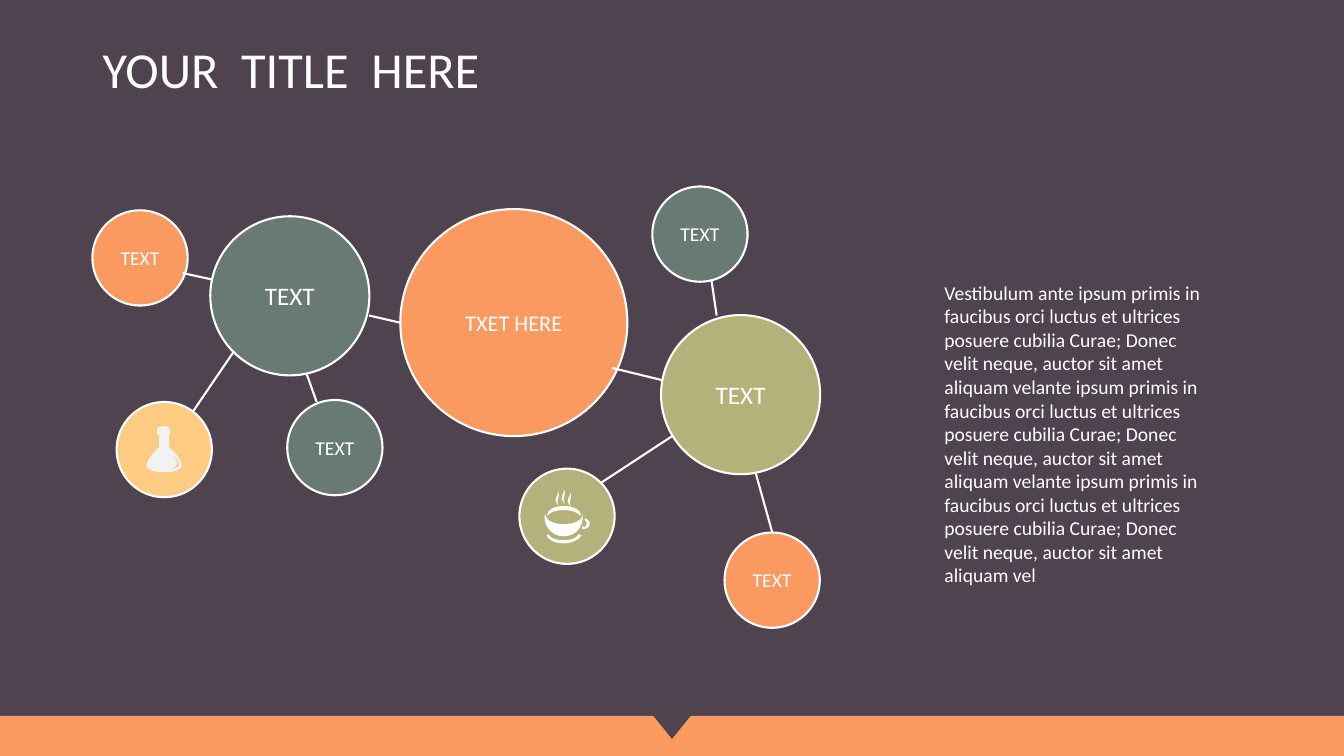
from lxml.etree import SubElement
from pptx import Presentation
from pptx.dml.color import RGBColor
from pptx.enum.shapes import MSO_CONNECTOR, MSO_SHAPE
from pptx.enum.text import MSO_ANCHOR, MSO_AUTO_SIZE, PP_ALIGN
from pptx.oxml.ns import qn
from pptx.util import Cm, Pt

PLUM = RGBColor(0x4F, 0x43, 0x4F)
ORANGE = RGBColor(0xFA, 0x9A, 0x60)
OLIVE = RGBColor(0xB4, 0xB1, 0x7A)
TEAL = RGBColor(0x69, 0x7A, 0x74)
YELLOW = RGBColor(0xFD, 0xCB, 0x82)
WHITE = RGBColor(0xFF, 0xFF, 0xFF)
PALE = RGBColor(0xF2, 0xF2, 0xF2)

FONT = "Calibri"
OUTLINE = Pt(1.5)
SLIDE_WIDTH, SLIDE_HEIGHT = 33.87, 19.05
BAR_TOP = 18.04
LARGE, MEDIUM, SMALL = 5.72, 4.01, 2.4
ICON_UNIT = Cm(2.54) / 100

BODY = (
    "Vestibulum ante ipsum primis in faucibus orci luctus et ultrices posuere cubilia Curae; "
    "Donec velit neque, auctor sit amet aliquam velante ipsum primis in faucibus orci luctus "
    "et ultrices posuere cubilia Curae; Donec velit neque, auctor sit amet aliquam velante "
    "ipsum primis in faucibus orci luctus et ultrices posuere cubilia Curae; Donec velit "
    "neque, auctor sit amet aliquam vel"
)

CIRCLES = [
    (10.09, 5.27, LARGE, ORANGE, "TXET HERE", 16),
    (16.66, 7.94, MEDIUM, OLIVE, "TEXT", 18),
    (5.3, 5.45, MEDIUM, TEAL, "TEXT", 18),
    (13.09, 11.81, SMALL, OLIVE, "", 14),
    (18.26, 13.42, SMALL, ORANGE, "TEXT", 14),
    (16.44, 4.7, SMALL, TEAL, "TEXT", 14),
    (7.24, 10.08, SMALL, TEAL, "TEXT", 14),
    (2.94, 10.13, SMALL, YELLOW, "", 14),
    (2.33, 5.3, SMALL, ORANGE, "TEXT", 14),
]

LINKS = [
    (15.42, 9.27, 16.69, 9.58),
    (9.3, 7.95, 10.08, 8.13),
    (4.6, 6.88, 5.33, 7.04),
    (16.97, 10.97, 15.14, 12.17),
    (19.05, 11.94, 19.46, 13.41),
    (17.93, 7.06, 18.06, 7.95),
    (7.72, 9.4, 7.98, 10.13),
    (5.89, 8.86, 4.85, 10.39),
]

SAUCER = [(4, 45), (6, 49), (12, 51), (19, 51), (26, 51), (32, 49), (34, 45),
          (37, 46), (37, 46), (37, 46), (34, 51), (27, 54), (19, 54),
          (11, 54), (4, 51), (2, 46), (4, 45), (4, 45), (4, 45)]
HANDLE = [(40, 29), (43, 30), (45, 32), (45, 34), (45, 38), (42, 40), (39, 40),
          (38, 40), (38, 40), (37, 40), (37, 39), (38, 38), (38, 37),
          (38, 37), (39, 38), (39, 38), (41, 38), (42, 36), (42, 34),
          (42, 33), (41, 32), (40, 31), (40, 31), (40, 30), (40, 29)]
BOWL = [(38, 25), (38, 26), (38, 27), (38, 28), (38, 39), (30, 47), (19, 47),
        (9, 47), (0, 39), (0, 28), (0, 27), (0, 26), (1, 25),
        (1, 31), (9, 35), (19, 35), (30, 35), (38, 31), (38, 25)]
COFFEE = [(19, 17), (28, 17), (36, 21), (36, 25), (36, 26), (36, 26), (36, 27),
          (33, 23), (27, 21), (19, 21), (12, 21), (5, 23), (3, 27),
          (3, 26), (3, 26), (3, 25), (3, 21), (10, 17), (19, 17)]
STEAM = [(0, 0), (4, 6), (-2, 7), (1, 15), (-6, 5), (2, 7), (0, 0)]
STEAM_TIPS = [(25, 3), (13, 2), (19, 0)]
FLASK = [(28, 22), (28, 22), (27, 22), (27, 20), (27, 18), (27, 11), (27, 9),
         (28, 9), (28, 8), (28, 8), (28, 3), (28, 3), (28, 3),
         (28, 1), (25, 0), (22, 0), (18, 0), (15, 1), (15, 3),
         (15, 8), (15, 8), (15, 8), (15, 8), (16, 9), (17, 9),
         (17, 11), (17, 18), (17, 20), (17, 22), (16, 22), (16, 22),
         (13, 24), (0, 38), (6, 42), (11, 46), (20, 46), (22, 45),
         (24, 46), (33, 46), (38, 42), (44, 38), (31, 24), (28, 22)]
FLASK_GLINT = [(28, 42), (28, 42), (35, 41), (35, 37), (35, 33), (29, 27), (29, 27),
               (29, 27), (37, 33), (37, 38), (37, 42), (28, 42), (28, 42)]


def format_text(text_frame, text, size, alignment=PP_ALIGN.LEFT):
    text_frame.text = text
    text_frame.word_wrap = True
    paragraph = text_frame.paragraphs[0]
    paragraph.alignment = alignment
    for run in paragraph.runs:
        run.font.name = FONT
        run.font.size = Pt(size)
        run.font.color.rgb = WHITE
    return paragraph


def fill_plain(shape, color):
    shape.shadow.inherit = False
    shape.fill.solid()
    shape.fill.fore_color.rgb = color
    shape.line.fill.background()


def add_plain_shape(slide, kind, left, top, width, height, color):
    shape = slide.shapes.add_shape(kind, Cm(left), Cm(top), Cm(width), Cm(height))
    fill_plain(shape, color)
    return shape


def add_footer(slide):
    add_plain_shape(slide, MSO_SHAPE.RECTANGLE, 0, BAR_TOP, SLIDE_WIDTH,
                    SLIDE_HEIGHT - BAR_TOP, ORANGE)
    notch = add_plain_shape(slide, MSO_SHAPE.ISOSCELES_TRIANGLE, 16.45, 18.02, 0.97, 0.6, PLUM)
    notch.rotation = 180


def place_title(slide):
    title = slide.shapes.title
    title.left, title.top, title.width, title.height = Cm(2.33), Cm(1), Cm(29.21), Cm(3.68)
    title.text_frame.auto_size = MSO_AUTO_SIZE.NONE
    title.text_frame.vertical_anchor = MSO_ANCHOR.TOP
    format_text(title.text_frame, "YOUR  TITLE  HERE", 36).line_spacing = 0.9


def add_circle(slide, left, top, diameter, color, text, size):
    circle = add_plain_shape(slide, MSO_SHAPE.OVAL, left, top, diameter, diameter, color)
    circle.line.color.rgb = WHITE
    circle.line.width = OUTLINE
    circle.text_frame.vertical_anchor = MSO_ANCHOR.MIDDLE
    if text:
        format_text(circle.text_frame, text, size, PP_ALIGN.CENTER)


def add_link(slide, *ends):
    link = slide.shapes.add_connector(MSO_CONNECTOR.STRAIGHT, *map(Cm, ends))
    link.line.color.rgb = WHITE
    link.line.width = OUTLINE
    SubElement(link._element.spPr, qn("a:effectLst"))


def bend_lines(shape):
    lines = list(shape._element.iter(qn("a:lnTo")))
    for first, second, third in zip(lines[::3], lines[1::3], lines[2::3]):
        first.tag = qn("a:cubicBezTo")
        for line in (second, third):
            first.append(line[0])
            line.getparent().remove(line)


def add_icon(slide, left, top, contours, color):
    builder = slide.shapes.build_freeform(*contours[0][0], scale=ICON_UNIT)
    for index, controls in enumerate(contours):
        if index:
            builder.move_to(*controls[0])
        builder.add_line_segments(controls[1:], close=True)
    icon = builder.convert_to_shape(Cm(left), Cm(top))
    bend_lines(icon)
    fill_plain(icon, color)


def add_body(slide):
    box = slide.shapes.add_textbox(Cm(23.55), Cm(6.95), Cm(7.01), Cm(8.03))
    format_text(box.text_frame, BODY, 14)
    box.text_frame.auto_size = MSO_AUTO_SIZE.SHAPE_TO_FIT_TEXT


def main():
    presentation = Presentation()
    presentation.slide_width, presentation.slide_height = Cm(SLIDE_WIDTH), Cm(SLIDE_HEIGHT)
    slide = presentation.slides.add_slide(presentation.slide_layouts[5])
    slide.background.fill.solid()
    slide.background.fill.fore_color.rgb = PLUM
    add_footer(slide)
    place_title(slide)
    for circle in CIRCLES:
        add_circle(slide, *circle)
    for link in LINKS:
        add_link(slide, *link)
    steam = [[(x + dx, y + dy) for dx, dy in STEAM] for x, y in STEAM_TIPS]
    add_icon(slide, 13.72, 12.32, [SAUCER, HANDLE, BOWL, COFFEE, *steam], WHITE)
    add_icon(slide, 3.58, 10.74, [FLASK, FLASK_GLINT], PALE)
    add_body(slide)
    presentation.save("out.pptx")


if __name__ == "__main__":
    main()
